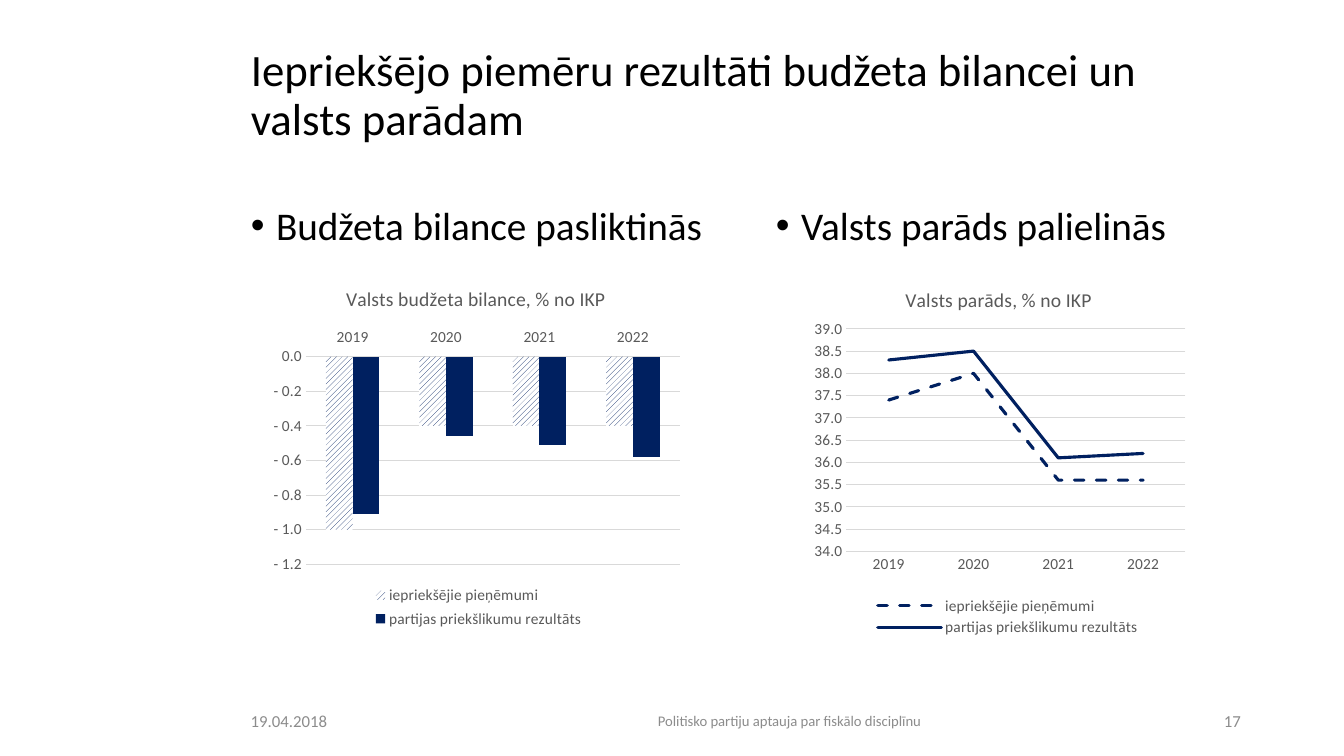
"""Build the slide on budget balance and government debt results."""
from lxml import etree
from pptx import Presentation
from pptx.chart.data import CategoryChartData
from pptx.dml.color import RGBColor
from pptx.enum.chart import XL_CHART_TYPE as Kind, XL_LEGEND_POSITION as LegendPos
from pptx.enum.chart import XL_MARKER_STYLE as Marker, XL_TICK_LABEL_POSITION as LabelPos
from pptx.enum.chart import XL_TICK_MARK as Tick
from pptx.enum.dml import MSO_LINE as Dash, MSO_PATTERN as Pattern
from pptx.enum.text import MSO_ANCHOR as Anchor, MSO_AUTO_SIZE as AutoSize, PP_ALIGN as Align
from pptx.oxml.ns import qn
from pptx.util import Pt

NAVY, GREY, PALE, BLACK, WHITE = "002060", "595959", "D9D9D9", "000000", "FFFFFF"


def style(font, size, colour):
    font.name, font.size = "Calibri", Pt(size)
    font.color.rgb = RGBColor.from_string(colour)


def place(element, index, **fractions):
    for old in element.findall(qn("c:layout")):
        element.remove(old)
    layout = etree.Element(qn("c:layout"))
    manual = etree.SubElement(layout, qn("c:manualLayout"))
    if element.tag == qn("c:plotArea"):
        etree.SubElement(manual, qn("c:layoutTarget"), val="inner")
    for axis in "xy":
        etree.SubElement(manual, qn(f"c:{axis}Mode"), val="edge")
    for key, fraction in fractions.items():
        etree.SubElement(manual, qn(f"c:{key}"), val=str(fraction))
    element.insert(index, layout)


deck = Presentation()
deck.slide_width, deck.slide_height = Pt(960), Pt(540)
slide = deck.slides.add_slide(deck.slide_layouts[3])
heading, balance_point, debt_point = slide.placeholders

for holder, words, left, top, width, height, size, anchor in (
    (heading, "Iepriekšējo piemēru rezultāti budžeta bilancei un valsts parādam",
     172, 29, 721.5, 80, 32, Anchor.MIDDLE),
    (balance_point, "Budžeta bilance pasliktinās", 172, 144, 361.5, 342.5, 28, Anchor.TOP),
    (debt_point, "Valsts parāds palielinās", 547, 144, 347, 342.5, 28, Anchor.TOP),
):
    holder.left, holder.top, holder.width, holder.height = map(Pt, (left, top, width, height))
    frame = holder.text_frame
    frame.text = words
    frame.auto_size, frame.vertical_anchor = AutoSize.NONE, anchor
    line = frame.paragraphs[0]
    line.alignment, line.line_spacing, line.space_before = Align.LEFT, 0.9, Pt(0)
    if holder is not heading:
        indents = line._p.get_or_add_pPr()
        indents.set("marL", str(Pt(18)))
        indents.set("indent", str(-Pt(18)))
    style(line.font, size, BLACK)

for words, left, width, size, align in (
    ("19.04.2018", 172, 118, 12, Align.LEFT),
    ("Politisko partiju aptauja par fiskālo disciplīnu", 310.5, 507, 10.5, Align.CENTER),
    ("17", 836.5, 57, 12, Align.RIGHT),
):
    footer = slide.shapes.add_textbox(Pt(left), Pt(500.5), Pt(width), Pt(28.75)).text_frame
    footer.word_wrap, footer.vertical_anchor = True, Anchor.MIDDLE
    footer.text = words
    footer.paragraphs[0].alignment = align
    style(footer.paragraphs[0].font, size, "8C8C8C")

for kind, caption, frame, scale, assumed, proposed, title_at, plot_at, legend_at in (
    (Kind.COLUMN_CLUSTERED, "Valsts budžeta bilance, % no IKP",
     (172, 188, 330, 267), (-1.2, 0, 0.2),
     (-1, -0.4, -0.4, -0.4), (-0.91, -0.46, -0.51, -0.58),
     dict(x=0.22, y=0.05), dict(x=0.141, y=0.25, w=0.809, h=0.556),
     dict(x=0.28, y=0.85, w=0.47, h=0.14)),
    (Kind.LINE, "Valsts parāds, % no IKP",
     (559.5, 188, 302.5, 274.5), (34, 39, 0.5),
     (37.4, 38, 35.6, 35.6), (38.3, 38.5, 36.1, 36.2),
     dict(x=0.28, y=0.05), dict(x=0.149, y=0.171, w=0.801, h=0.579),
     dict(x=0.21, y=0.86, w=0.64, h=0.12)),
):
    data = CategoryChartData(number_format="0.0")
    data.categories = ["2019", "2020", "2021", "2022"]
    data.add_series("iepriekšējie pieņēmumi", assumed)
    data.add_series("partijas priekšlikumu rezultāts", proposed)
    chart = slide.shapes.add_chart(kind, *map(Pt, frame), data).chart
    style(chart.font, 11, GREY)

    chart.has_title = True
    chart.chart_title.text_frame.text = caption
    caption_font = chart.chart_title.text_frame.paragraphs[0].font
    style(caption_font, 14, GREY)
    caption_font.bold = False

    chart.has_legend = True
    chart.legend.position = LegendPos.BOTTOM
    chart.legend.include_in_layout = False
    style(chart.legend.font, 11, GREY)

    years, percent = chart.category_axis, chart.value_axis
    for axis in (years, percent):
        axis.major_tick_mark = axis.minor_tick_mark = Tick.NONE
        style(axis.tick_labels.font, 11, GREY)
    percent.minimum_scale, percent.maximum_scale, percent.major_unit = scale
    percent.tick_labels.number_format = "#\\ ##0.0"
    percent.tick_labels.number_format_is_linked = False
    percent.format.line.fill.background()
    percent.has_major_gridlines = True
    for rule in (years.format.line, percent.major_gridlines.format.line):
        rule.color.rgb, rule.width = RGBColor.from_string(PALE), Pt(0.75)

    plot = chart.plots[0]
    plot.vary_by_categories = False
    before, after = plot.series
    if kind == Kind.LINE:
        for series in (before, after):
            series.smooth, series.marker.style = False, Marker.NONE
            stroke = series.format.line
            stroke.color.rgb, stroke.width = RGBColor.from_string(NAVY), Pt(2.25)
            series._element.spPr.find(qn("a:ln")).set("cap", "rnd")
        before.format.line.dash_style = Dash.DASH
    else:
        years.tick_label_position = LabelPos.HIGH
        plot.gap_width, plot.overlap = 150, 0
        before.invert_if_negative = after.invert_if_negative = False
        hatch = before.format.fill
        hatch.patterned()
        hatch.pattern = Pattern.WIDE_UPWARD_DIAGONAL
        hatch.fore_color.rgb = RGBColor.from_string(NAVY)
        hatch.back_color.rgb = RGBColor.from_string(WHITE)
        after.format.fill.solid()
        after.format.fill.fore_color.rgb = RGBColor.from_string(NAVY)

    place(chart.chart_title._element, 1, **title_at)
    place(plot._element.getparent(), 0, **plot_at)
    place(chart.legend._element, 1, **legend_at)

deck.save("out.pptx")
